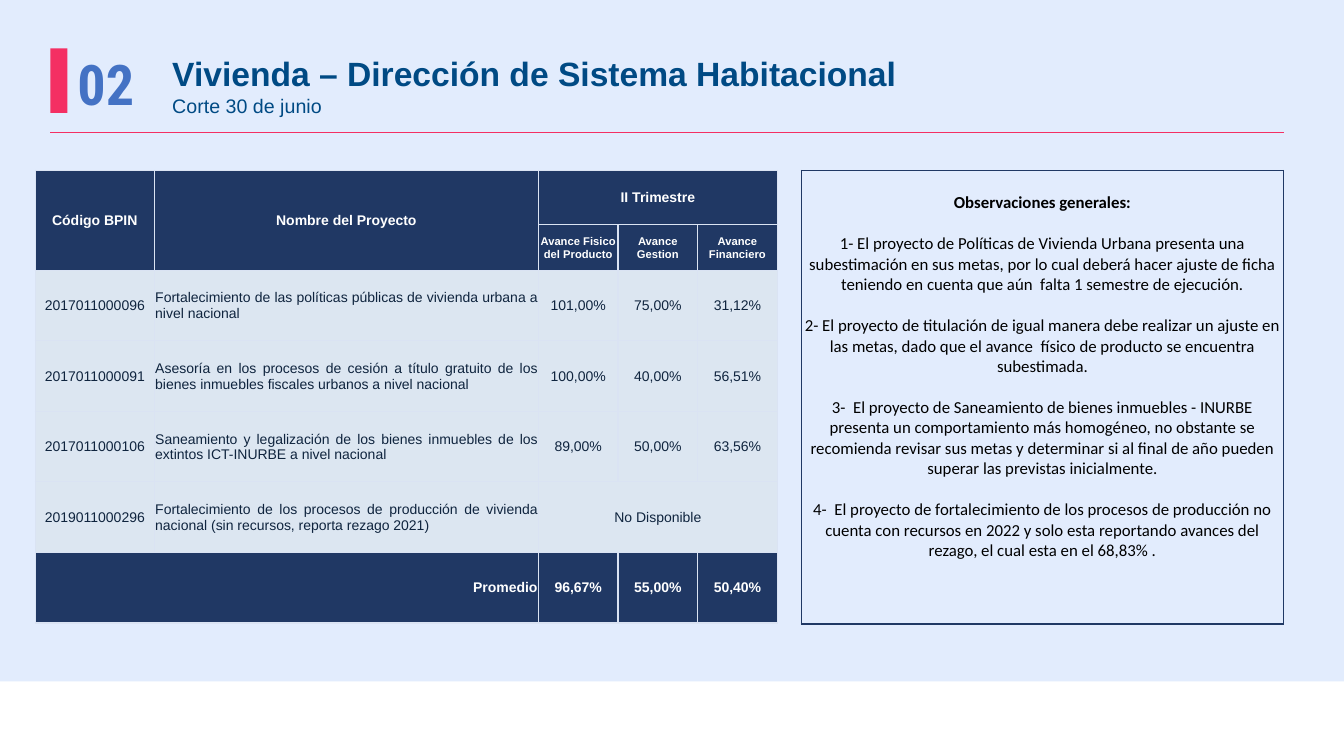
from dataclasses import dataclass

from lxml import etree
from pptx import Presentation
from pptx.dml.color import RGBColor
from pptx.enum.shapes import MSO_CONNECTOR, MSO_SHAPE
from pptx.enum.text import MSO_ANCHOR, MSO_AUTO_SIZE, PP_ALIGN
from pptx.oxml.ns import qn
from pptx.util import Pt

EMU_PER_PX = 9144  # 100 px to the inch
LEFT, CENTER, RIGHT, JUSTIFY = PP_ALIGN.LEFT, PP_ALIGN.CENTER, PP_ALIGN.RIGHT, PP_ALIGN.JUSTIFY
RECTANGLE, STRAIGHT = MSO_SHAPE.RECTANGLE, MSO_CONNECTOR.STRAIGHT
MIDDLE, FIT_SHAPE = MSO_ANCHOR.MIDDLE, MSO_AUTO_SIZE.SHAPE_TO_FIT_TEXT


@dataclass(frozen=True)
class Theme:
    panel: str = "E2ECFD"
    accent: str = "F42F63"
    title: str = "004A84"
    number: str = "4472C4"
    navy: str = "203864"
    row: str = "DCE6F1"
    grid: str = "DAE3F3"
    ink: str = "0F243E"
    white: str = "FFFFFF"
    black: str = "000000"
    sans: str = "Arial"
    humanist: str = "Calibri"
    digits: str = "Roboto Condensed"
    number_size: int = 40
    title_size: int = 24
    subtitle_size: int = 14
    remark_size: int = 12
    cell_size: int = 10
    small_size: int = 8


THEME = Theme()

COLUMNS = [118, 381, 79, 79, 79]
ROWS = [54, 45] + [70] * 5
HEADINGS = ["Código BPIN", "Nombre del Proyecto", "II Trimestre"]
MEASURES = ["Avance Fisico del Producto", "Avance Gestion", "Avance Financiero"]
PROJECTS = [
    ["2017011000096", "Fortalecimiento de las políticas públicas de vivienda urbana a nivel nacional",
     "101,00%", "75,00%", "31,12%"],
    ["2017011000091", "Asesoría en los procesos de cesión a título gratuito de los bienes inmuebles "
     "fiscales urbanos a nivel nacional", "100,00%", "40,00%", "56,51%"],
    ["2017011000106", "Saneamiento y legalización de los bienes inmuebles de los extintos ICT-INURBE "
     "a nivel nacional", "89,00%", "50,00%", "63,56%"],
    ["2019011000296", "Fortalecimiento de los procesos de producción de vivienda nacional "
     "(sin recursos, reporta rezago 2021)", "No Disponible"],
]
AVERAGES = ["Promedio", "", "96,67%", "55,00%", "50,40%"]
MERGES = [(0, 0, 1, 0), (0, 1, 1, 1), (0, 2, 0, 4), (5, 2, 5, 4), (6, 0, 6, 1)]
OBSERVATIONS = [
    "1- El proyecto de Políticas de Vivienda Urbana presenta una subestimación en sus metas, por lo cual "
    "deberá hacer ajuste de ficha teniendo en cuenta que aún  falta 1 semestre de ejecución.",
    "2- El proyecto de titulación de igual manera debe realizar un ajuste en las metas, dado que el "
    "avance  físico de producto se encuentra subestimada.",
    "3-  El proyecto de Saneamiento de bienes inmuebles - INURBE presenta un comportamiento más "
    "homogéneo, no obstante se recomienda revisar sus metas y determinar si al final de año pueden "
    "superar las previstas inicialmente.",
    "4-  El proyecto de fortalecimiento de los procesos de producción no cuenta con recursos en 2022 y "
    "solo esta reportando avances del rezago, el cual esta en el 68,83% .",
]


def px(*lengths):
    return [length * EMU_PER_PX for length in lengths]


def color(code):
    return RGBColor.from_string(code)


def write(frame, text, font=THEME.sans, size=THEME.cell_size, ink=THEME.ink, bold=False,
          align=LEFT, before=0):
    """Fill the first paragraph of the frame, or add one after it."""
    para = frame.add_paragraph() if frame.text else frame.paragraphs[0]
    para.alignment = align
    para.space_before = Pt(before)
    span = para.add_run()
    span.text = text
    span.font.name, span.font.size, span.font.bold = font, Pt(size), bold
    span.font.color.rgb = color(ink)


def add_block(page, box, fill):
    block = page.shapes.add_shape(RECTANGLE, *px(*box))
    block.shadow.inherit = False
    block.fill.solid()
    block.fill.fore_color.rgb = color(fill)
    block.line.fill.background()


def add_text_box(page, box, wrap):
    frame = page.shapes.add_textbox(*px(*box)).text_frame
    frame.word_wrap = wrap
    frame.auto_size = FIT_SHAPE
    return frame


def add_grid(page, box, columns, rows):
    left, top = box
    extent = sum(columns), sum(rows)
    table = page.shapes.add_table(len(rows), len(columns), *px(left, top, *extent)).table
    table.first_row = table.horz_banding = False
    for column, width in zip(table.columns, px(*columns)):
        column.width = width
    for row, height in zip(table.rows, px(*rows)):
        row.height = height
    return table


def style_cell(cell, border, fill=None, bottom=0):
    cell.vertical_anchor = MIDDLE
    cell.margin_left, cell.margin_top, cell.margin_right, cell.margin_bottom = px(1, 1, 1, bottom)
    properties = cell._tc.get_or_add_tcPr()
    for side in ("a:lnL", "a:lnR", "a:lnT", "a:lnB"):
        edge = etree.SubElement(properties, qn(side), w=str(Pt(1)))
        solid = etree.SubElement(edge, qn("a:solidFill"))
        etree.SubElement(solid, qn("a:srgbClr"), val=border)
    if fill:
        cell.fill.solid()
        cell.fill.fore_color.rgb = color(fill)
    else:
        cell.fill.background()


def add_header(page, left, top, width):
    # Title and cut-off date
    titles = add_text_box(page, (left + 111, top, 948, 74), True)
    write(titles, "Vivienda – Dirección de Sistema Habitacional",
          size=THEME.title_size, ink=THEME.title, bold=True)
    write(titles, "Corte 30 de junio", size=THEME.subtitle_size, ink=THEME.title)
    # Section number beside its bar
    add_block(page, (left, top, 17, 64), THEME.accent)
    number = add_text_box(page, (left + 17, top - 4, 79, 77), False)
    write(number, "02", font=THEME.digits, size=THEME.number_size, ink=THEME.number, bold=True)
    # Rule under the header
    rule = page.shapes.add_connector(STRAIGHT, *px(left, top + 83, left + width, top + 83))
    rule.line.color.rgb = color(THEME.accent)
    rule.line.width = Pt(0.5)
    etree.SubElement(rule._element.spPr, qn("a:effectLst"))


def add_projects(page, left, top):
    table = add_grid(page, (left, top), COLUMNS, ROWS)
    for first_row, first_column, last_row, last_column in MERGES:
        table.cell(first_row, first_column).merge(table.cell(last_row, last_column))
    content = [HEADINGS, ["", "", *MEASURES], *PROJECTS, AVERAGES]
    for row, texts in enumerate(content):
        is_project = texts in PROJECTS
        for column in range(len(COLUMNS)):
            cell = table.cell(row, column)
            style_cell(cell, THEME.grid, THEME.row if is_project else THEME.navy)
            if column >= len(texts) or not texts[column]:
                continue
            align = JUSTIFY if is_project and column == 1 else CENTER
            write(cell.text_frame, texts[column],
                  size=THEME.small_size if row == 1 else THEME.cell_size,
                  ink=THEME.ink if is_project else THEME.white, bold=not is_project,
                  align=RIGHT if texts[column] == "Promedio" else align)


def add_observations(page, left, top, width, height):
    cell = add_grid(page, (left, top), [width], [height]).cell(0, 0)
    style_cell(cell, THEME.navy, bottom=41)
    style = dict(font=THEME.humanist, size=THEME.remark_size, ink=THEME.black, align=CENTER)
    write(cell.text_frame, "Observaciones generales:", bold=True, **style)
    for observation in OBSERVATIONS:
        write(cell.text_frame, observation, before=14.65, **style)


def main():
    deck = Presentation()
    deck.slide_width, deck.slide_height = px(1333, 750)
    page = deck.slides.add_slide(deck.slide_layouts[6])
    add_block(page, (0, 0, 1333, 676), THEME.panel)
    add_header(page, 50, 48, 1224)
    add_projects(page, 35, 169)
    add_observations(page, 795, 169, 478, 450)
    deck.save("out.pptx")


if __name__ == "__main__":
    main()
